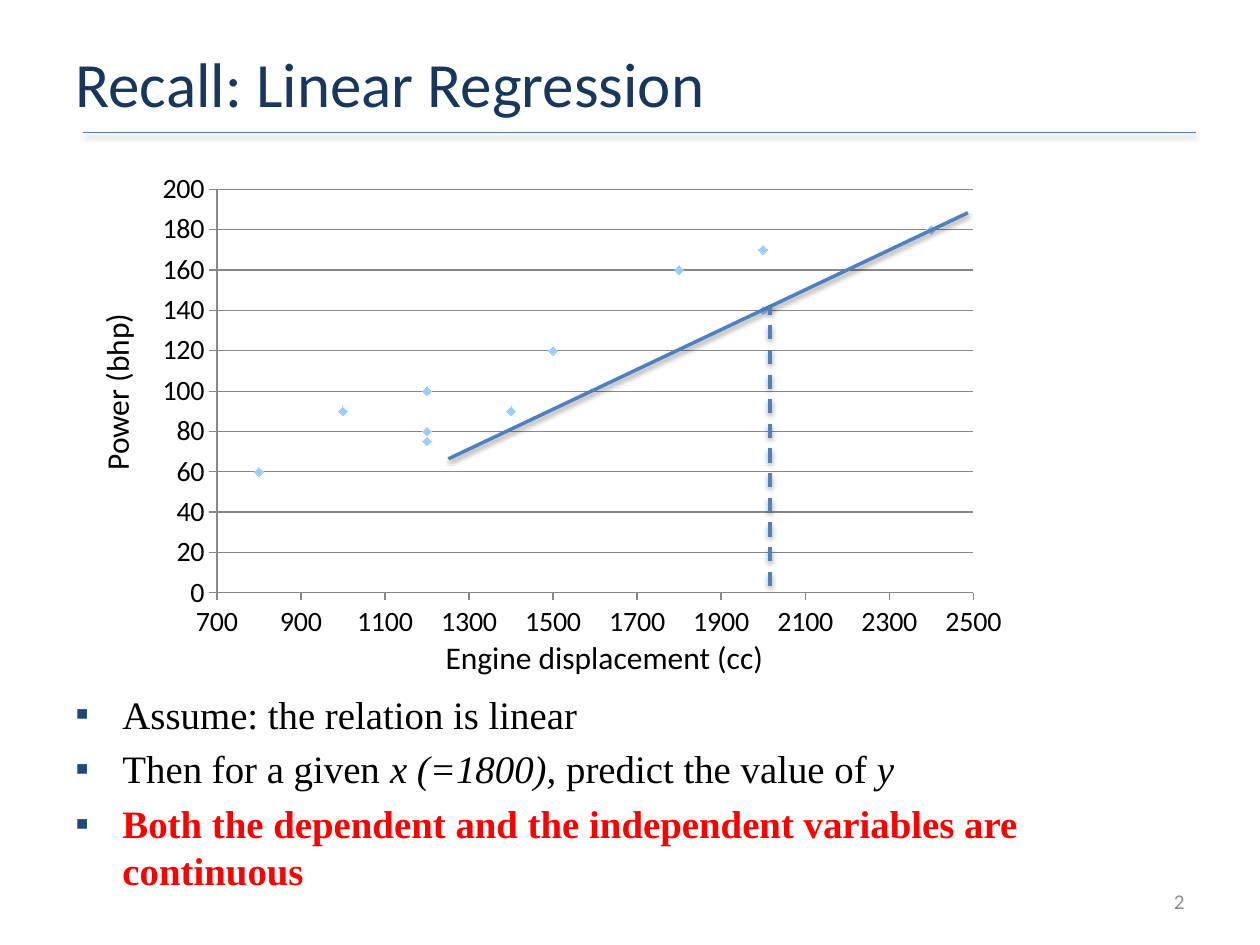
from lxml import etree
from pptx import Presentation
from pptx.chart.data import XyChartData
from pptx.dml.color import RGBColor
from pptx.enum.chart import XL_CHART_TYPE, XL_MARKER_STYLE, XL_TICK_LABEL_POSITION, XL_TICK_MARK
from pptx.enum.dml import MSO_LINE
from pptx.enum.shapes import MSO_CONNECTOR
from pptx.enum.text import MSO_ANCHOR, MSO_AUTO_SIZE, PP_ALIGN
from pptx.oxml import parse_xml
from pptx.oxml.ns import qn
from pptx.util import Cm, Pt

SCATTER = XL_CHART_TYPE.XY_SCATTER
DIAMOND = XL_MARKER_STYLE.DIAMOND
LOW = XL_TICK_LABEL_POSITION.LOW
OUTSIDE, NO_TICK = XL_TICK_MARK.OUTSIDE, XL_TICK_MARK.NONE
DASH = MSO_LINE.DASH
STRAIGHT = MSO_CONNECTOR.STRAIGHT
MIDDLE, TOP = MSO_ANCHOR.MIDDLE, MSO_ANCHOR.TOP
LEFT, CENTER, RIGHT = PP_ALIGN.LEFT, PP_ALIGN.CENTER, PP_ALIGN.RIGHT
NO_FIT = MSO_AUTO_SIZE.NONE

SANS, SERIF = "Calibri", "Times New Roman"
BLACK, NAVY, BLUE, PALE_BLUE = "000000", "17375E", "4F81BD", "99CCFF"
BULLET_BLUE, RED, GRAY, GRID = "1F497D", "FF0000", "8C8C8C", "878787"

TITLE = "Recall: Linear Regression"
ENGINES = [(800, 60), (1000, 90), (1200, 80), (1200, 100), (1200, 75), (1400, 90),
           (1500, 120), (1800, 160), (2000, 140), (2000, 170), (2400, 180)]
AXIS_TITLES = [("Engine displacement (cc)", 7.98, 12.73, 0), ("Power (bhp)", -1.83, 7.37, 270)]
BULLETS = [
    [("Assume: the relation is linear", {})],
    [("Then for a given ", {}), ("x (=1800), ", {"italic": True}),
     ("predict the value of ", {}), ("y", {"italic": True})],
    [("Both the dependent and the independent variables are continuous",
      {"bold": True, "color": RED})],
]
LINES = [((1.68, 2.67), (24.1, 2.67), 1, None),
         ((9.04, 9.25), (19.51, 4.29), 2, None),
         ((15.52, 11.81), (15.52, 6.15), 2, DASH)]
PLOT_AREA = {"x": 0.08, "y": 0.05, "w": 0.87, "h": 0.83}
NS = 'xmlns:a="http://schemas.openxmlformats.org/drawingml/2006/main"'
SHADOW = (f'<a:effectLst {NS}><a:outerShdw blurRad="39370" dist="20320" dir="5400000" '
          'rotWithShape="0"><a:srgbClr val="000000"><a:alpha val="38000"/></a:srgbClr>'
          '</a:outerShdw></a:effectLst>')


def rgb(value):
    """Turn a hex string into a colour."""
    return RGBColor.from_string(value)


def style_font(font, size, name=SANS, color=BLACK, bold=False, italic=False):
    """Set the look of a font."""
    font.size, font.name, font.bold, font.italic = Pt(size), name, bold, italic
    font.color.rgb = rgb(color)


def add_span(para, text, size, **style):
    """Append one formatted run to a paragraph."""
    span = para.add_run()
    span.text = text
    style_font(span.font, size, **style)


def place(shape, left, top, width, height):
    """Position a shape with lengths in centimetres."""
    shape.left, shape.top, shape.width, shape.height = map(Cm, (left, top, width, height))


def add_box(page, left, top, width, height, anchor=TOP):
    """Add a wrapping text box."""
    box = page.shapes.add_textbox(*map(Cm, (left, top, width, height)))
    box.text_frame.word_wrap = True
    box.text_frame.vertical_anchor = anchor
    return box


def add_title(page):
    """Format and fill the title placeholder."""
    title = page.shapes.title
    place(title, 1.27, 0.76, 22.86, 1.8)
    frame = title.text_frame
    frame.vertical_anchor, frame.auto_size = MIDDLE, NO_FIT
    para = frame.paragraphs[0]
    para.alignment = LEFT
    add_span(para, TITLE, 36, color=NAVY)


def add_line(page, start, end, width, dash):
    """Draw a shadowed straight line."""
    line = page.shapes.add_connector(STRAIGHT, *map(Cm, start + end))
    line.line.color.rgb, line.line.width = rgb(BLUE), Pt(width)
    if dash:
        line.line.dash_style = dash
    line._element.spPr.append(parse_xml(SHADOW))


def style_axis(axis, low, high, step):
    """Set the range, ticks and labels of an axis."""
    axis.minimum_scale, axis.maximum_scale, axis.major_unit = low, high, step
    axis.major_tick_mark, axis.minor_tick_mark = OUTSIDE, NO_TICK
    axis.tick_label_position = LOW
    axis.tick_labels.number_format = "General"
    axis.tick_labels.number_format_is_linked = False
    axis.format.line.color.rgb = rgb(GRID)
    style_font(axis.tick_labels.font, 16)


def add_scatter(page):
    """Chart power against engine displacement."""
    data = XyChartData()
    points = data.add_series("Series 1")
    for displacement, power in ENGINES:
        points.add_data_point(displacement, power)
    chart = page.shapes.add_chart(SCATTER, *map(Cm, (2.97, 3.33, 17.53, 9.8)), data).chart
    chart.has_legend = chart.has_title = False
    style_font(chart.font, 10)
    chart.plots[0].vary_by_categories = False

    style_axis(chart.category_axis, 700, 2500, 200)
    style_axis(chart.value_axis, 0, 200, 20)
    chart.category_axis.has_major_gridlines = False
    chart.value_axis.has_major_gridlines = True
    chart.value_axis.major_gridlines.format.line.color.rgb = rgb(GRID)

    series = chart.plots[0].series[0]
    series.smooth = False
    series.format.line.fill.background()
    marker = series.marker
    marker.style, marker.size = DIAMOND, 5
    marker.format.fill.solid()
    marker.format.fill.fore_color.rgb = rgb(PALE_BLUE)
    marker.format.line.fill.background()

    plot_area = chart._chartSpace.chart.plotArea
    for old in plot_area.findall(qn("c:layout")):
        plot_area.remove(old)
    layout = etree.Element(qn("c:layout"))
    manual = etree.SubElement(layout, qn("c:manualLayout"))
    settings = {"layoutTarget": "inner", "xMode": "edge", "yMode": "edge", **PLOT_AREA}
    for key, value in settings.items():
        etree.SubElement(manual, qn(f"c:{key}")).set("val", str(value))
    plot_area.insert(0, layout)


def add_bullets(page):
    """Write the bulleted remarks below the chart."""
    frame = add_box(page, 1.27, 13.79, 22.86, 4.14).text_frame
    for index, spans in enumerate(BULLETS):
        para = frame.add_paragraph() if index else frame.paragraphs[0]
        para.space_before = Pt(4.7)
        props = para._p.get_or_add_pPr()
        props.set("marL", str(Cm(0.95)))
        props.set("indent", str(Cm(-0.95)))
        color = etree.SubElement(props, qn("a:buClr"))
        etree.SubElement(color, qn("a:srgbClr")).set("val", BULLET_BLUE)
        etree.SubElement(props, qn("a:buFont")).set("typeface", SERIF)
        etree.SubElement(props, qn("a:buChar")).set("char", "▪")
        for text, style in spans:
            add_span(para, text, 22.2, name=SERIF, **style)


def main():
    """Build the slide and save it."""
    deck = Presentation()
    deck.slide_width, deck.slide_height = Cm(25.4), Cm(19.05)
    page = deck.slides.add_slide(deck.slide_layouts[5])
    underline, *chart_lines = LINES
    add_line(page, *underline)
    add_title(page)
    number = add_box(page, 18.21, 17.65, 5.92, 1.02, MIDDLE).text_frame.paragraphs[0]
    number.alignment = RIGHT
    add_span(number, "2", 12, color=GRAY)
    add_scatter(page)
    for text, left, top, rotation in AXIS_TITLES:
        box = add_box(page, left, top, 8.41, 1.07)
        box.rotation = rotation
        para = box.text_frame.paragraphs[0]
        para.alignment = CENTER
        add_span(para, text, 18)
    add_bullets(page)
    for line in chart_lines:
        add_line(page, *line)
    deck.save("out.pptx")


if __name__ == "__main__":
    main()
